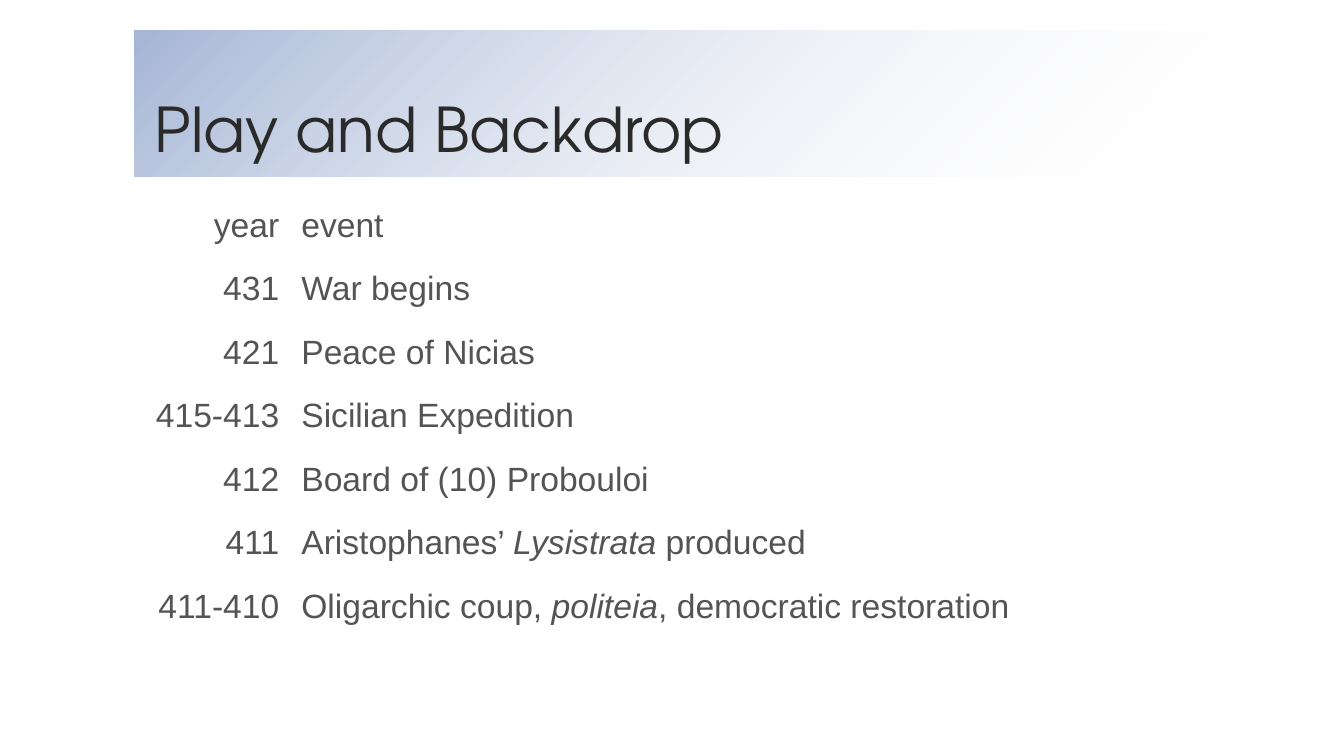
from lxml import etree
from pptx import Presentation
from pptx.dml.color import RGBColor
from pptx.enum.text import MSO_ANCHOR, MSO_AUTO_SIZE, PP_ALIGN
from pptx.oxml.ns import qn
from pptx.util import Inches, Pt

LEFT, RIGHT = PP_ALIGN.LEFT, PP_ALIGN.RIGHT
BOTTOM = MSO_ANCHOR.BOTTOM
NO_AUTOFIT = MSO_AUTO_SIZE.NONE

SLIDE_WIDTH, SLIDE_HEIGHT = Inches(13.33), Inches(7.5)
CONTENT_LEFT, CONTENT_WIDTH = 0.1, 0.8
YEAR_SHARE = 0.145
ROW_HEIGHT, LAST_ROW_HEIGHT = Inches(0.63), Inches(1.03)

TIMELINE = [
    ("year", ["event"]),
    ("431", ["War begins"]),
    ("421", ["Peace of Nicias"]),
    ("415-413", ["Sicilian Expedition"]),
    ("412", ["Board of (10) Probouloi"]),
    ("411", ["Aristophanes’ ", "Lysistrata", " produced"]),
    ("411-410", ["Oligarchic coup, ", "politeia", ", democratic restoration"]),
]


def color(hex_string):
    return RGBColor.from_string(hex_string)


def slide_box(left, top, width, height):
    return (round(left * SLIDE_WIDTH), round(top * SLIDE_HEIGHT),
            round(width * SLIDE_WIDTH), round(height * SLIDE_HEIGHT))


def style_run(run, font_name, size, hex_string):
    run.font.name = font_name
    run.font.size = Pt(size)
    run.font.color.rgb = color(hex_string)


def fill_with_fade(shape, hex_string):
    shape.fill.gradient()
    shape.fill.gradient_angle = 315
    start, end = shape.fill.gradient_stops
    start.color.rgb, start.position = color(hex_string), 0
    end.color.rgb, end.position = color("FFFFFF"), 1
    last_color = list(shape.element.spPr.iter(qn("a:srgbClr")))[-1]
    etree.SubElement(last_color, qn("a:alpha"), val="0")


def add_title(slide, box, text):
    title = slide.shapes.title
    title.left, title.top, title.width, title.height = box
    fill_with_fade(title, "A6B6D6")
    text_frame = title.text_frame
    text_frame.text = text
    text_frame.word_wrap = True
    text_frame.auto_size = NO_AUTOFIT
    text_frame.vertical_anchor = BOTTOM
    text_frame.margin_left = text_frame.margin_right = Inches(0.2)
    text_frame.margin_top = text_frame.margin_bottom = Inches(0.1)
    paragraph = text_frame.paragraphs[0]
    paragraph.alignment = LEFT
    paragraph.line_spacing = 0.9
    style_run(paragraph.runs[0], "TeX Gyre Adventor", 44, "2A2A2A")


def write_cell(cell, parts, alignment):
    cell.fill.background()
    cell.margin_left = cell.margin_right = Inches(0.11)
    cell.margin_top = cell.margin_bottom = Inches(0.05)
    paragraph = cell.text_frame.paragraphs[0]
    paragraph.alignment = alignment
    paragraph.space_before = Pt(4.8)
    for index, part in enumerate(parts):
        run = paragraph.add_run()
        run.text = part
        style_run(run, "Arial", 24, "545454")
        run.font.italic = index % 2 == 1


def add_timeline(slide, box, entries):
    table = slide.shapes.add_table(len(entries), 2, *box).table
    table.first_row = table.horz_banding = False
    width = box[2]
    table.columns[0].width = round(width * YEAR_SHARE)
    table.columns[1].width = width - table.columns[0].width
    for row_index, (year, event_parts) in enumerate(entries):
        table.rows[row_index].height = ROW_HEIGHT
        write_cell(table.cell(row_index, 0), [year], RIGHT)
        write_cell(table.cell(row_index, 1), event_parts, LEFT)
    table.rows[len(entries) - 1].height = LAST_ROW_HEIGHT


def main():
    presentation = Presentation()
    presentation.slide_width = SLIDE_WIDTH
    presentation.slide_height = SLIDE_HEIGHT
    slide = presentation.slides.add_slide(presentation.slide_layouts[5])
    add_title(slide, slide_box(CONTENT_LEFT, 0.04, CONTENT_WIDTH, 0.193), "Play and Backdrop")
    add_timeline(slide, slide_box(CONTENT_LEFT, 0.267, CONTENT_WIDTH, 0.64), TIMELINE)
    presentation.save("out.pptx")


if __name__ == "__main__":
    main()
